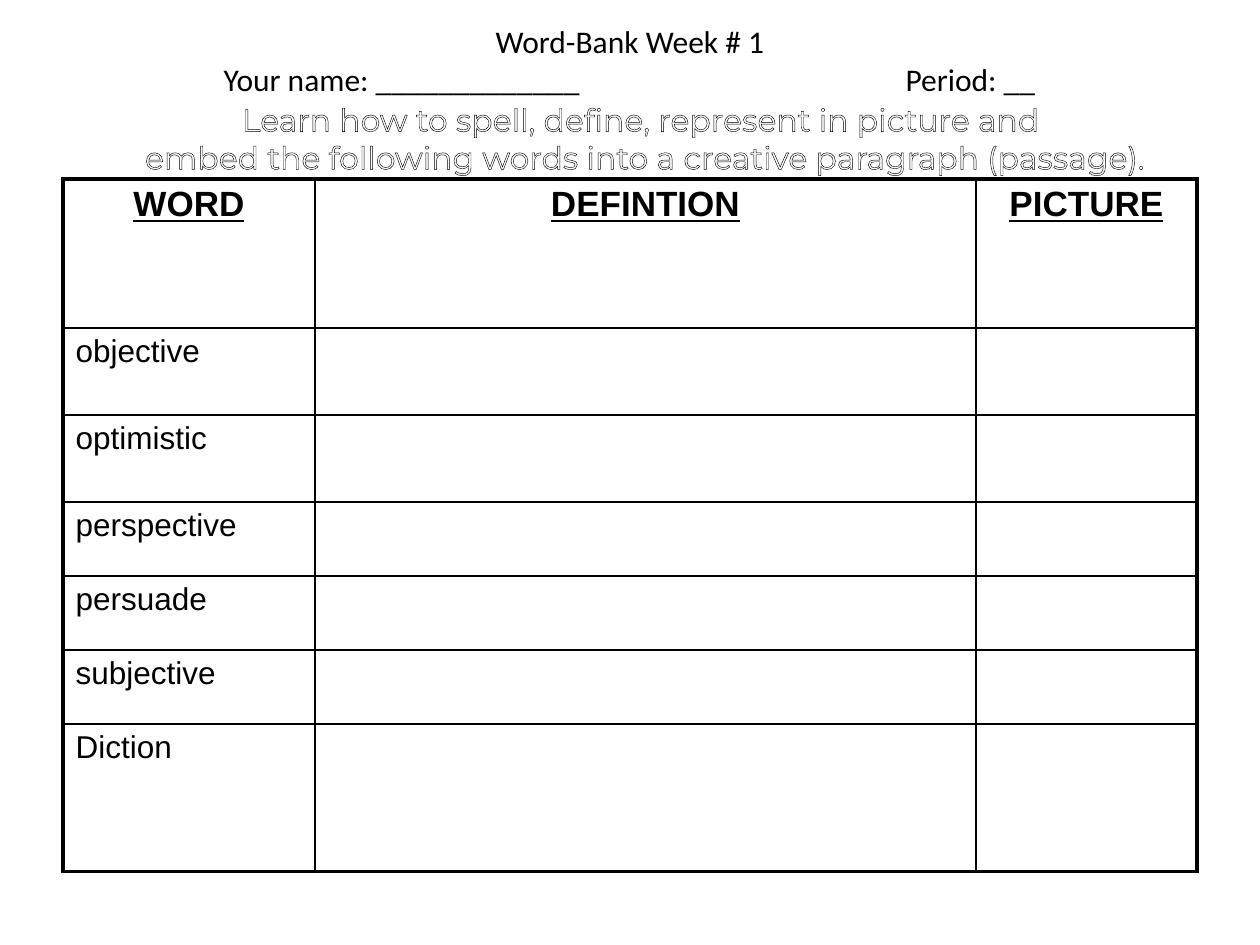
from lxml.etree import SubElement
from pptx import Presentation
from pptx.dml.color import RGBColor
from pptx.enum.text import MSO_ANCHOR as ANCHOR, MSO_AUTO_SIZE as FIT, PP_ALIGN as ALIGN
from pptx.oxml import parse_xml
from pptx.oxml.ns import nsdecls, qn
from pptx.util import Pt

PX = 914400 / 126


def px(*lengths):
    return [round(n * PX) for n in lengths]


def style(font, name, size, color):
    font.name, font.size = name, Pt(size)
    font.color.rgb = RGBColor.from_string(color)


LINE = '<a:{} {} w="{}"><a:solidFill><a:srgbClr val="000000"/></a:solidFill></a:{}>'

prs = Presentation()
prs.slide_width, prs.slide_height = px(1260, 945)
s = prs.slides.add_slide(prs.slide_layouts[5])

title = s.shapes.title
title.left, title.top, title.width, title.height = px(63, 0, 1134, 120)
tf = title.text_frame
tf.auto_size = FIT.NONE
tf.vertical_anchor = ANCHOR.MIDDLE
tf.text = "Word-Bank Week # 1\n\tYour name: _____________\tPeriod: __"
for p, align in zip(tf.paragraphs, (ALIGN.CENTER, ALIGN.LEFT)):
    p.alignment = align
    style(p.font, "Calibri", 18, "000000")
tabs = SubElement(tf.paragraphs[1]._p.get_or_add_pPr(), qn("a:tabLst"))
for pos in px(148, 830):
    SubElement(tabs, qn("a:tab"), pos=str(pos), algn="l")
tabs.getparent().insert(0, tabs)

sp = s.shapes.add_textbox(*px(136, 94, 1018, 73))
tf = sp.text_frame
tf.word_wrap = False
tf.margin_left = tf.margin_right = 0
tf.text = ("Learn how to spell, define, represent in picture and \n"
           "embed the following words into a creative paragraph (passage).")
for p in tf.paragraphs:
    p.alignment = ALIGN.CENTER
    r = p.runs[0]
    style(r.font, "Montserrat", 18, "FFFFFF")
    r._r.get_or_add_rPr().insert(0, parse_xml(LINE.format("ln", nsdecls("a"), Pt(0.75), "ln")))

headers = ["WORD", "DEFINTION", "PICTURE"]
words = ["objective", "optimistic", "perspective", "persuade", "subjective", "Diction"]
rows = [headers] + [[word, "", ""] for word in words]
col_widths = px(252, 661, 221)
row_heights = px(149, 87, 87, 74, 74, 74, 148)

frame = s.shapes.add_table(len(rows), len(headers), *px(63, 179, 1134, 693))
table = frame.table
table.first_row = table.horz_banding = False
for col, width in zip(table.columns, col_widths):
    col.width = width
for row, height in zip(table.rows, row_heights):
    row.height = height

for i, texts in enumerate(rows):
    for j, text in enumerate(texts):
        cell = table.cell(i, j)
        cell.fill.background()
        cell.text = text
        p = cell.text_frame.paragraphs[0]
        style(p.font, "Arial", 18, "000000")
        if i == 0:
            p.alignment = ALIGN.CENTER
            p.font.size = Pt(20)
            p.font.bold = p.font.underline = True
        outer = {"lnL": j == 0, "lnR": j == len(headers) - 1,
                 "lnT": i == 0, "lnB": i == len(rows) - 1}
        for k, (side, thick) in enumerate(outer.items()):
            width = Pt(2.25 if thick else 1)
            cell._tc.get_or_add_tcPr().insert(
                k, parse_xml(LINE.format(side, nsdecls("a"), width, side)))

prs.save("out.pptx")
